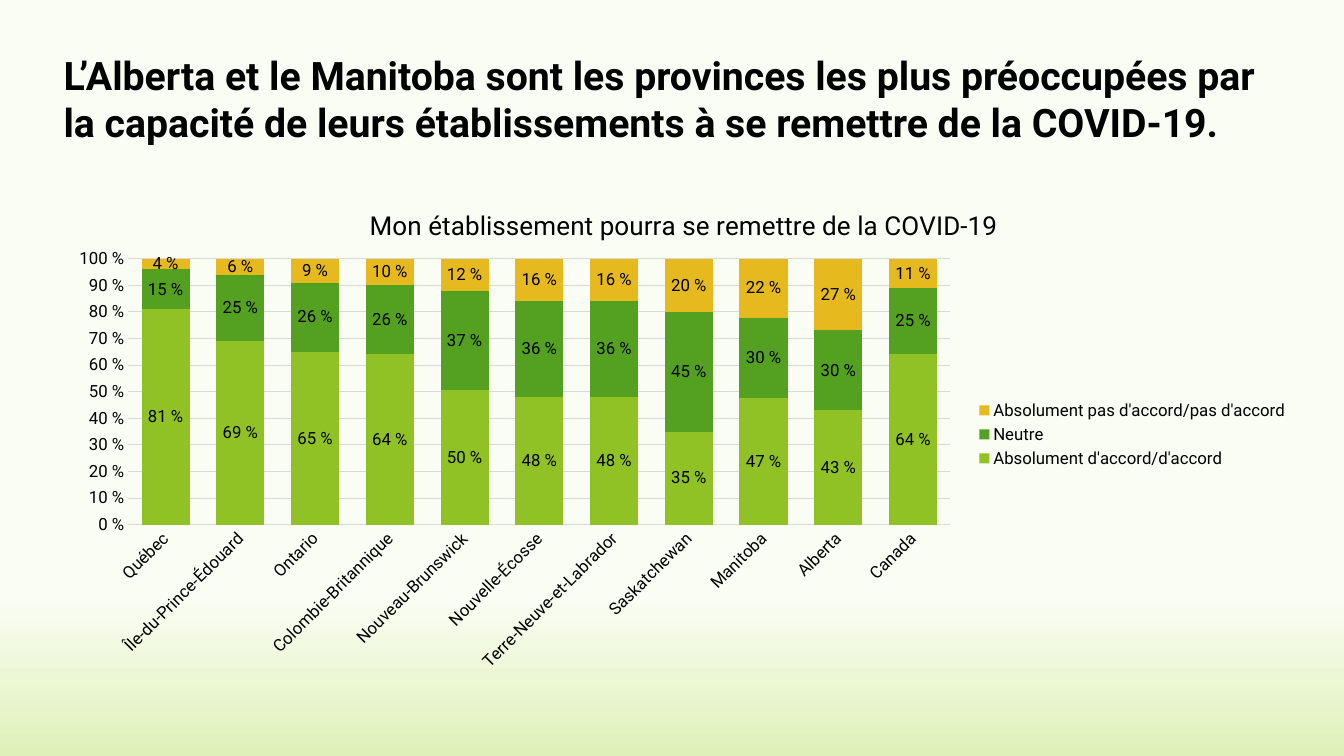
import pptx
import pptx.chart.data
import pptx.dml.color
import pptx.enum.chart
import pptx.enum.text
import pptx.oxml
import pptx.oxml.ns
import pptx.util

Pt = pptx.util.Pt

TITLE = (
    "L’Alberta et le Manitoba sont les provinces les plus préoccupées par "
    "la capacité de leurs établissements à se remettre de la COVID-19."
)
CHART_TITLE = "Mon établissement pourra se remettre de la COVID-19"
PROVINCES = [
    "Québec", "Île‑du‑Prince‑Édouard", "Ontario", "Colombie‑Britannique",
    "Nouveau‑Brunswick", "Nouvelle‑Écosse", "Terre‑Neuve‑et‑Labrador",
    "Saskatchewan", "Manitoba", "Alberta", "Canada",
]
ANSWERS = [
    ("Absolument d'accord/d'accord", "90C226",
     [0.81, 0.69, 0.65, 0.64, 0.5, 0.48, 0.48, 0.35, 0.47, 0.43, 0.64]),
    ("Neutre", "54A021",
     [0.15, 0.25, 0.26, 0.26, 0.37, 0.36, 0.36, 0.45, 0.3, 0.3, 0.25]),
    ("Absolument pas d'accord/pas d'accord", "E6B91E",
     [0.04, 0.06, 0.09, 0.1, 0.12, 0.16, 0.16, 0.2, 0.22, 0.27, 0.11]),
]
BACKGROUND = [(0.79, "FAFDF3"), (1, "DFF1B9")]
TITLE_BOX = (38.2, 33.1, 874.8, 91.4)
CHART_BOX = (38.2, 131, 889.9, 358.6)
PLOT_PLACE = {"x": 0.06, "y": 0.15, "w": 0.66, "h": 0.53}
HEADING_PLACE = {"x": 0.25, "y": 0.04}
PERCENT = "0\\ %"
FONT = "Roboto"
GRID = "D9D9D9"


def color(value):
    return pptx.dml.color.RGBColor.from_string(value)


def style_font(font, size=12, bold=False, ink="000000"):
    font.name = FONT
    font.size = Pt(size)
    font.bold = bold
    font.color.rgb = color(ink)


def write_text(frame, text, **style):
    para = frame.paragraphs[0]
    span = para.add_run()
    span.text = text
    style_font(span.font, **style)
    return para


def style_line(line):
    line.color.rgb = color(GRID)
    line.width = Pt(0.75)


def place_part(part, index, place, inner=False):
    for old in part.findall(pptx.oxml.ns.qn("c:layout")):
        part.remove(old)
    target = '<c:layoutTarget val="inner"/>' if inner else ""
    modes = "".join(f'<c:{key}Mode val="edge"/>' for key in place if key in "xy")
    values = "".join(f'<c:{key} val="{value}"/>' for key, value in place.items())
    part.insert(index, pptx.oxml.parse_xml(
        f'<c:layout {pptx.oxml.ns.nsdecls("c")}><c:manualLayout>'
        f"{target}{modes}{values}</c:manualLayout></c:layout>"))


def paint_background(page):
    fill = page.background.fill
    fill.gradient()
    fill.gradient_angle = 270
    for stop, (position, shade) in zip(fill.gradient_stops, BACKGROUND):
        stop.position = position
        stop.color.rgb = color(shade)


def add_title(page):
    box = page.shapes.title
    box.left, box.top, box.width, box.height = map(Pt, TITLE_BOX)
    frame = box.text_frame
    frame.word_wrap = True
    frame.auto_size = pptx.enum.text.MSO_AUTO_SIZE.NONE
    frame.vertical_anchor = pptx.enum.text.MSO_ANCHOR.TOP
    para = write_text(frame, TITLE, size=28, bold=True)
    para.alignment = pptx.enum.text.PP_ALIGN.LEFT
    para.line_spacing = 1.0


def style_axes(chart):
    for axis in (chart.category_axis, chart.value_axis):
        axis.major_tick_mark = pptx.enum.chart.XL_TICK_MARK.NONE
        axis.minor_tick_mark = pptx.enum.chart.XL_TICK_MARK.NONE
        style_font(axis.tick_labels.font)
    provinces, shares = chart.category_axis, chart.value_axis
    style_line(provinces.format.line)
    properties = provinces._element.find(pptx.oxml.ns.qn("c:txPr"))
    properties.find(pptx.oxml.ns.qn("a:bodyPr")).set("rot", "-2700000")
    shares.minimum_scale, shares.maximum_scale = 0, 1
    shares.major_unit = 0.1
    shares.tick_labels.number_format = PERCENT
    shares.tick_labels.number_format_is_linked = False
    shares.format.line.fill.background()
    style_line(shares.major_gridlines.format.line)


def add_answers_chart(page):
    data = pptx.chart.data.CategoryChartData(number_format=PERCENT)
    data.categories = PROVINCES
    for name, shade, values in ANSWERS:
        data.add_series(name, values)
    chart = page.shapes.add_chart(
        pptx.enum.chart.XL_CHART_TYPE.COLUMN_STACKED_100,
        *map(Pt, CHART_BOX), data).chart
    style_font(chart.font, size=10)
    chart.has_title = True
    write_text(chart.chart_title.text_frame, CHART_TITLE, size=18.6)
    chart.chart_title.include_in_layout = False
    chart.has_legend = True
    chart.legend.position = pptx.enum.chart.XL_LEGEND_POSITION.RIGHT
    chart.legend.include_in_layout = False
    style_font(chart.legend.font)
    style_axes(chart)
    plot = chart.plots[0]
    plot.gap_width, plot.overlap = 55, 100
    plot.vary_by_categories = False
    for series, (name, shade, values) in zip(plot.series, ANSWERS):
        series.format.fill.solid()
        series.format.fill.fore_color.rgb = color(shade)
        labels = series.data_labels
        labels.show_value = True
        labels.number_format = PERCENT
        labels.number_format_is_linked = False
        style_font(labels.font)
    place_part(chart.chart_title._element, 1, HEADING_PLACE)
    place_part(chart._chartSpace.chart.plotArea, 0, PLOT_PLACE, inner=True)


def main():
    deck = pptx.Presentation()
    deck.slide_width, deck.slide_height = Pt(960), Pt(540)
    page = deck.slides.add_slide(deck.slide_layouts[5])
    paint_background(page)
    add_title(page)
    add_answers_chart(page)
    deck.save("out.pptx")


if __name__ == "__main__":
    main()
